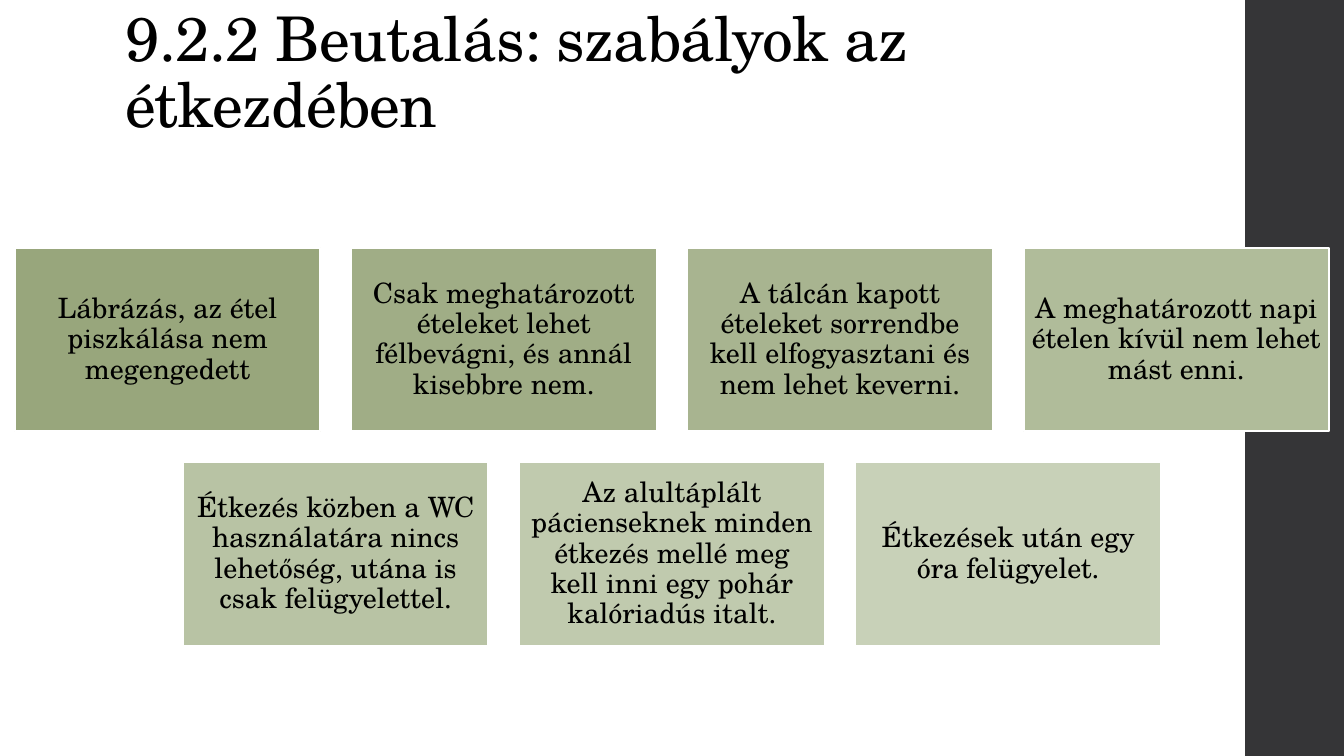
import pptx
import pptx.util
from pptx.dml.color import RGBColor
from pptx.enum.shapes import MSO_SHAPE
from pptx.enum.text import MSO_ANCHOR, PP_ALIGN

TITLE = "9.2.2 Beutalás: szabályok az étkezdében"
RULE_ROWS = [
    [
        ("Lábrázás, az étel piszkálása nem megengedett", "98A67C"),
        ("Csak meghatározott ételeket lehet félbevágni, és annál kisebbre nem.", "A0AD86"),
        ("A tálcán kapott ételeket sorrendbe kell elfogyasztani és nem lehet keverni.", "A8B490"),
        ("A meghatározott napi ételen kívül nem lehet mást enni.", "B0BC9A"),
    ],
    [
        ("Étkezés közben a WC használatára nincs lehetőség, utána is csak felügyelettel.", "B8C3A4"),
        ("Az alultáplált pácienseknek minden étkezés mellé meg kell inni egy pohár kalóriadús italt.", "C0CAAE"),
        ("Étkezések után egy óra felügyelet.", "C8D1B8"),
    ],
]
THEME = {
    "font": "TeX Gyre Schola",
    "ink": "000000",
    "band": "353537",
    "border": "FFFFFF",
    "border_width": 1.35,
    "title_size": 44,
    "rule_size": 20,
    "line_spacing": 0.9,
}
SLIDE_W, SLIDE_H = 13.33, 7.5
BAND_LEFT, BAND_W = 12.35, 1
TITLE_BOX = (1.15, 0, 10.6, 1.45)
CARD_W, CARD_H, GAP = 3.03, 1.82, 0.305
RULES_TOP = 2.46
CARD_INSET = 0.08


def inches(*lengths):
    return [pptx.util.Inches(length) for length in lengths]


def add_block(slide, box, color):
    block = slide.shapes.add_shape(MSO_SHAPE.RECTANGLE, *inches(*box))
    block.shadow.inherit = False
    block.fill.solid()
    block.fill.fore_color.rgb = RGBColor.from_string(color)
    block.line.fill.background()
    return block


def write(frame, wording, size, align, anchor):
    frame.word_wrap = True
    frame.vertical_anchor = anchor
    paragraph = frame.paragraphs[0]
    paragraph.text = wording
    paragraph.alignment = align
    paragraph.line_spacing = THEME["line_spacing"]
    paragraph.font.name = THEME["font"]
    paragraph.font.size = pptx.util.Pt(size)
    paragraph.font.color.rgb = RGBColor.from_string(THEME["ink"])
    return paragraph


def add_rule(slide, box, wording, color):
    card = add_block(slide, box, color)
    card.line.color.rgb = RGBColor.from_string(THEME["border"])
    card.line.width = pptx.util.Pt(THEME["border_width"])
    frame = card.text_frame
    frame.margin_left = frame.margin_right = pptx.util.Inches(CARD_INSET)
    frame.margin_top = frame.margin_bottom = pptx.util.Inches(CARD_INSET)
    write(frame, wording, THEME["rule_size"], PP_ALIGN.CENTER, MSO_ANCHOR.MIDDLE)


def main():
    deck = pptx.Presentation()
    deck.slide_width, deck.slide_height = inches(SLIDE_W, SLIDE_H)
    slide = deck.slides.add_slide(deck.slide_layouts[6])

    add_block(slide, (BAND_LEFT, 0, BAND_W, SLIDE_H), THEME["band"])

    heading = slide.shapes.add_textbox(*inches(*TITLE_BOX))
    title = write(heading.text_frame, TITLE, THEME["title_size"], PP_ALIGN.LEFT, MSO_ANCHOR.BOTTOM)
    title.runs[0].font._element.set("spc", "-50")

    for row, rules in enumerate(RULE_ROWS):
        row_width = len(rules) * (CARD_W + GAP) - GAP
        row_left = (SLIDE_W - row_width) / 2
        top = RULES_TOP + row * (CARD_H + GAP)
        for column, (wording, color) in enumerate(rules):
            left = row_left + column * (CARD_W + GAP)
            add_rule(slide, (left, top, CARD_W, CARD_H), wording, color)

    deck.save("out.pptx")


if __name__ == "__main__":
    main()
